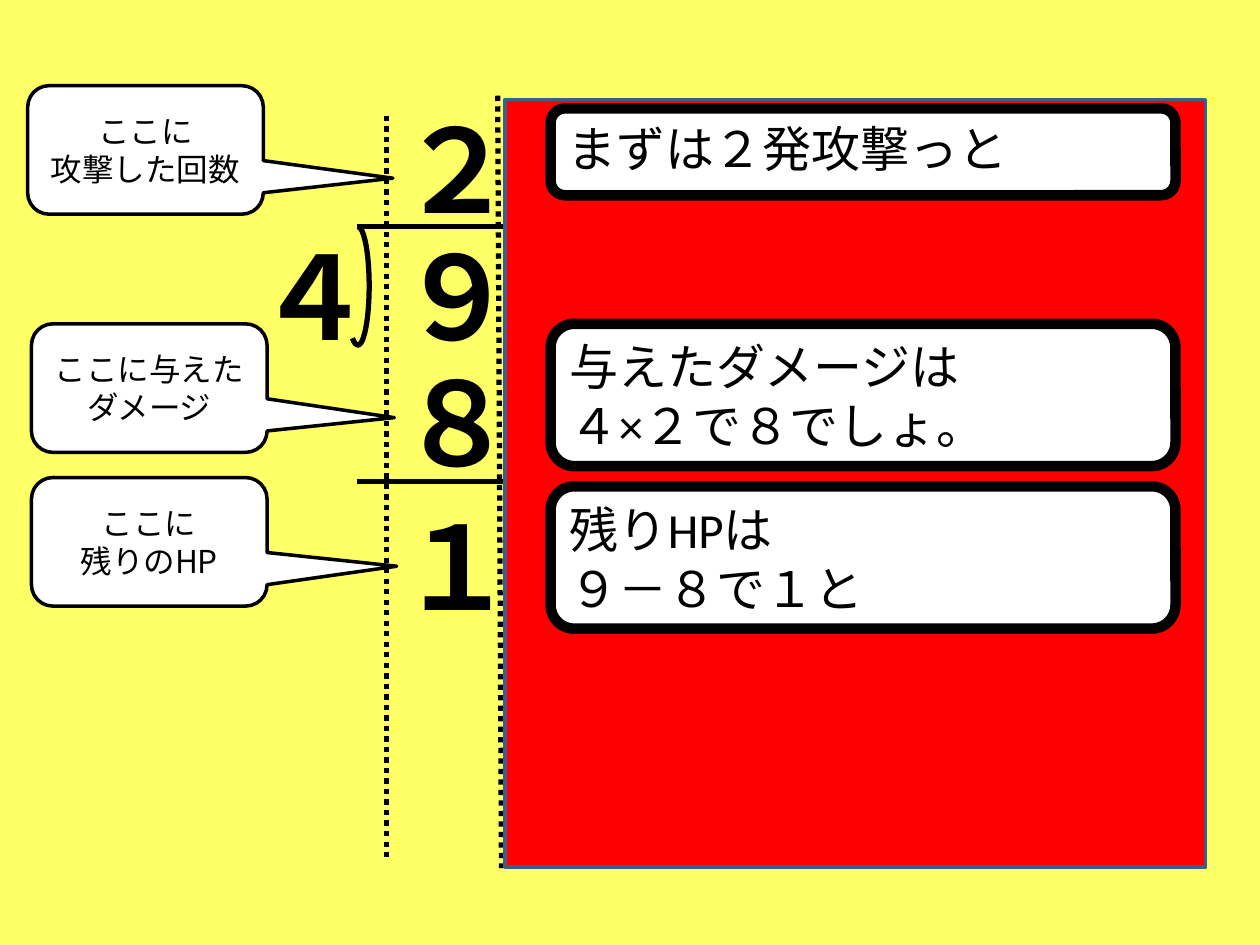
from lxml import etree
from pptx import Presentation
from pptx.dml.color import RGBColor
from pptx.enum.dml import MSO_LINE
from pptx.enum.shapes import MSO_CONNECTOR, MSO_SHAPE
from pptx.enum.text import MSO_ANCHOR, MSO_AUTO_SIZE, PP_ALIGN
from pptx.oxml.ns import qn
from pptx.util import Inches, Pt

DOT = MSO_LINE.ROUND_DOT
STRAIGHT = MSO_CONNECTOR.STRAIGHT
ARC, RECT = MSO_SHAPE.ARC, MSO_SHAPE.RECTANGLE
ROUND = MSO_SHAPE.ROUNDED_RECTANGLE
CALL = MSO_SHAPE.ROUNDED_RECTANGULAR_CALLOUT
TOP, MIDDLE = MSO_ANCHOR.TOP, MSO_ANCHOR.MIDDLE
LEFT, CENTER = PP_ALIGN.LEFT, PP_ALIGN.CENTER
GROW = MSO_AUTO_SIZE.SHAPE_TO_FIT_TEXT

COLORS = {"page": "FFFF66", "ink": "000000", "panel": "FF0000",
          "edge": "3A5F8C", "paper": "FFFFFF"}
KANA, LATIN = "Noto Sans CJK JP", "Calibri"

DIGITS = [("９", 3.07, 1.74), ("４", 1.94, 1.74), ("２", 3.07, 0.73),
          ("８", 3.07, 2.74), ("１", 3.07, 3.88)]
DOTS = [(3.95, 0.76, 3.98, 6.89), (3.07, 0.92, 3.07, 6.84)]
HINTS = [("ここに与えたダメージ", 0.25, 2.57, 1.04, 0.23),
         ("ここに\n攻撃した回数", 0.22, 0.68, 1.05, 0.22),
         ("ここに\n残りのHP", 0.25, 3.79, 1.05, 0.19)]
STEPS = [("まずは２発攻撃っと", 0.86, 0.69),
         ("与えたダメージは\n４×２で８でしょ。", 2.57, 1.13),
         ("残りHPは\n９－８で１と", 3.86, 1.13)]


def color(name):
    return RGBColor.from_string(COLORS[name])


def write(shape, text, size, face, align, bold=False):
    frame = shape.text_frame
    frame.text = text
    for para in frame.paragraphs:
        para.alignment = align
        for run in para.runs:
            font = run.font
            font.size, font.name, font.bold = Pt(size), face, bold
            font.color.rgb = color("ink")
            props = run._r.get_or_add_rPr()
            props.set("lang", "ja-JP")
            etree.SubElement(props, qn("a:ea")).set("typeface", KANA)


def draw(home, kind, box, fill, edge, width):
    shape = home.add_shape(kind, *map(Inches, box))
    shape.shadow.inherit = False
    if fill:
        shape.fill.solid()
        shape.fill.fore_color.rgb = color(fill)
    else:
        shape.fill.background()
    shape.line.color.rgb = color(edge)
    shape.line.width = Pt(width)
    return shape


def rule(home, ends, dash=None):
    line = home.add_connector(STRAIGHT, *map(Inches, ends))
    line.line.color.rgb = color("ink")
    line.line.width = Pt(3)
    if dash:
        line.line.dash_style = dash
    etree.SubElement(line._element.spPr, qn("a:effectLst"))


def digit(home, text, left, top):
    box = home.add_textbox(*map(Inches, (left, top, 0.84, 1.21)))
    box.text_frame.word_wrap = False
    box.text_frame.auto_size = GROW
    write(box, text, 66, LATIN, CENTER, True)


def main():
    deck = Presentation()
    deck.slide_width, deck.slide_height = Inches(10), Inches(7.5)
    slide = deck.slides.add_slide(deck.slide_layouts[6])
    slide.background.fill.solid()
    slide.background.fill.fore_color.rgb = color("page")
    home = slide.shapes

    for ends in DOTS:
        rule(home, ends, DOT)
    rule(home, (2.83, 3.82, 5.07, 3.82))
    sign = home.add_group_shape().shapes
    rule(sign, (2.83, 1.8, 5.07, 1.8))
    arc = draw(sign, ARC, (2.75, 1.8, 0.18, 0.94), None, "ink", 3)
    arc.adjustments[0], arc.adjustments[1] = 162, 57.5
    for item in DIGITS:
        digit(home, *item)

    draw(home, RECT, (4.01, 0.79, 5.56, 6.09), "panel", "edge", 2)
    for text, left, top, tip_x, tip_y in HINTS:
        hint = draw(home, CALL, (left, top, 1.87, 1.02), "paper", "ink", 2)
        hint.adjustments[0], hint.adjustments[1] = tip_x, tip_y
        hint.text_frame.word_wrap = True
        hint.text_frame.vertical_anchor = MIDDLE
        write(hint, text, 18, KANA, CENTER)
    for text, top, height in STEPS:
        step = draw(home, ROUND, (4.37, top, 4.96, height), "paper", "ink", 6)
        step.text_frame.word_wrap = True
        step.text_frame.vertical_anchor = TOP
        write(step, text, 28, LATIN, LEFT)
    deck.save("out.pptx")


if __name__ == "__main__":
    main()
